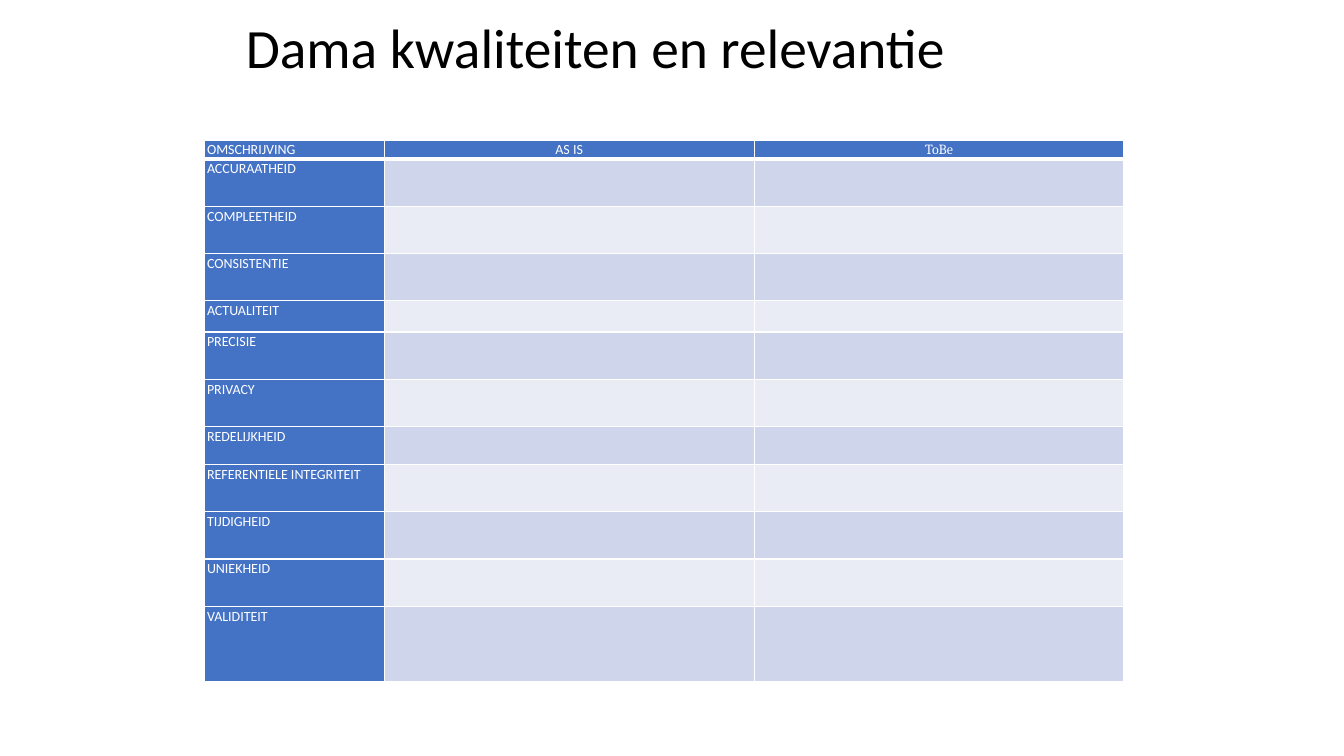
from lxml import etree
from pptx import Presentation
from pptx import util as u
from pptx.dml.color import RGBColor
from pptx.enum import text
from pptx.oxml import ns

COLOURS = {
    "title": "000000",
    "white": "FFFFFF",
    "header": "4472C4",
    "odd": "CFD5EA",
    "even": "E9EBF5",
}
HEADINGS = [("OMSCHRIJVING", "Calibri"), ("AS IS", "Calibri"), ("ToBe", "Cambria")]
COLUMN_WIDTHS = [128.8, 264.2, 264.2]
HEADER_HEIGHT = 13.5
QUALITIES = [
    ("ACCURAATHEID", 33.8),
    ("COMPLEETHEID", 33.8),
    ("CONSISTENTIE", 33.8),
    ("ACTUALITEIT", 22.3),
    ("PRECISIE", 33.8),
    ("PRIVACY", 33.8),
    ("REDELIJKHEID", 27),
    ("REFERENTIELE INTEGRITEIT", 33.8),
    ("TIJDIGHEID", 33.8),
    ("UNIEKHEID", 33.8),
    ("VALIDITEIT", 54),
]


def colour(name):
    return RGBColor.from_string(COLOURS[name])


def format_paragraph(paragraph, size, font_name, colour_name, spacing, centred=False):
    align = text.PP_ALIGN
    paragraph.alignment = align.CENTER if centred else align.LEFT
    paragraph.line_spacing = spacing
    paragraph.font.size = u.Pt(size)
    paragraph.font.name = font_name
    paragraph.font.color.rgb = colour(colour_name)


def add_title(slide, words):
    box = slide.shapes.add_textbox(u.Pt(168.5), u.Pt(15), u.Pt(620.6), u.Pt(42.5))
    frame = box.text_frame
    frame.word_wrap = True
    frame.vertical_anchor = text.MSO_ANCHOR.MIDDLE
    frame.text = words
    format_paragraph(frame.paragraphs[0], 39.6, "Calibri", "title", 0.9)


def add_borders(cell, bottom_width):
    properties = cell._tc.get_or_add_tcPr()
    for side, width in (("L", 1), ("R", 1), ("T", 1), ("B", bottom_width)):
        line = etree.SubElement(properties, ns.qn(f"a:ln{side}"), w=str(u.Pt(width)))
        fill = etree.SubElement(line, ns.qn("a:solidFill"))
        etree.SubElement(fill, ns.qn("a:srgbClr"), val=COLOURS["white"])


def style_cell(cell, fill_name, bottom_width=1):
    cell.margin_left = cell.margin_right = u.Pt(2.2)
    cell.margin_top = cell.margin_bottom = 0
    add_borders(cell, bottom_width)
    cell.fill.solid()
    cell.fill.fore_color.rgb = colour(fill_name)


def write_cell(cell, words, font_name="Calibri", centred=False):
    cell.text = words
    paragraph = cell.text_frame.paragraphs[0]
    format_paragraph(paragraph, 10, font_name, "white", 1.1, centred)


def add_quality_table(slide):
    heights = [HEADER_HEIGHT] + [height for _, height in QUALITIES]
    frame = slide.shapes.add_table(
        len(heights), len(COLUMN_WIDTHS), u.Pt(145.7), u.Pt(100),
        u.Pt(sum(COLUMN_WIDTHS)), u.Pt(sum(heights)))
    table = frame.table
    for column, width in zip(table.columns, COLUMN_WIDTHS):
        column.width = u.Pt(width)
    for row, height in zip(table.rows, heights):
        row.height = u.Pt(height)

    # Heading row
    for index, (heading, font_name) in enumerate(HEADINGS):
        cell = table.cell(0, index)
        style_cell(cell, "header", bottom_width=3)
        write_cell(cell, heading, font_name, centred=index > 0)

    # One banded row per quality
    for index, (quality, _) in enumerate(QUALITIES, start=1):
        band = "odd" if index % 2 else "even"
        for column, fill_name in enumerate(("header", band, band)):
            style_cell(table.cell(index, column), fill_name)
        write_cell(table.cell(index, 0), quality)


def main():
    presentation = Presentation()
    presentation.slide_width = u.Pt(960)
    presentation.slide_height = u.Pt(540)
    slide = presentation.slides.add_slide(presentation.slide_layouts[6])
    add_title(slide, "Dama kwaliteiten en relevantie")
    add_quality_table(slide)
    presentation.save("out.pptx")


if __name__ == "__main__":
    main()
